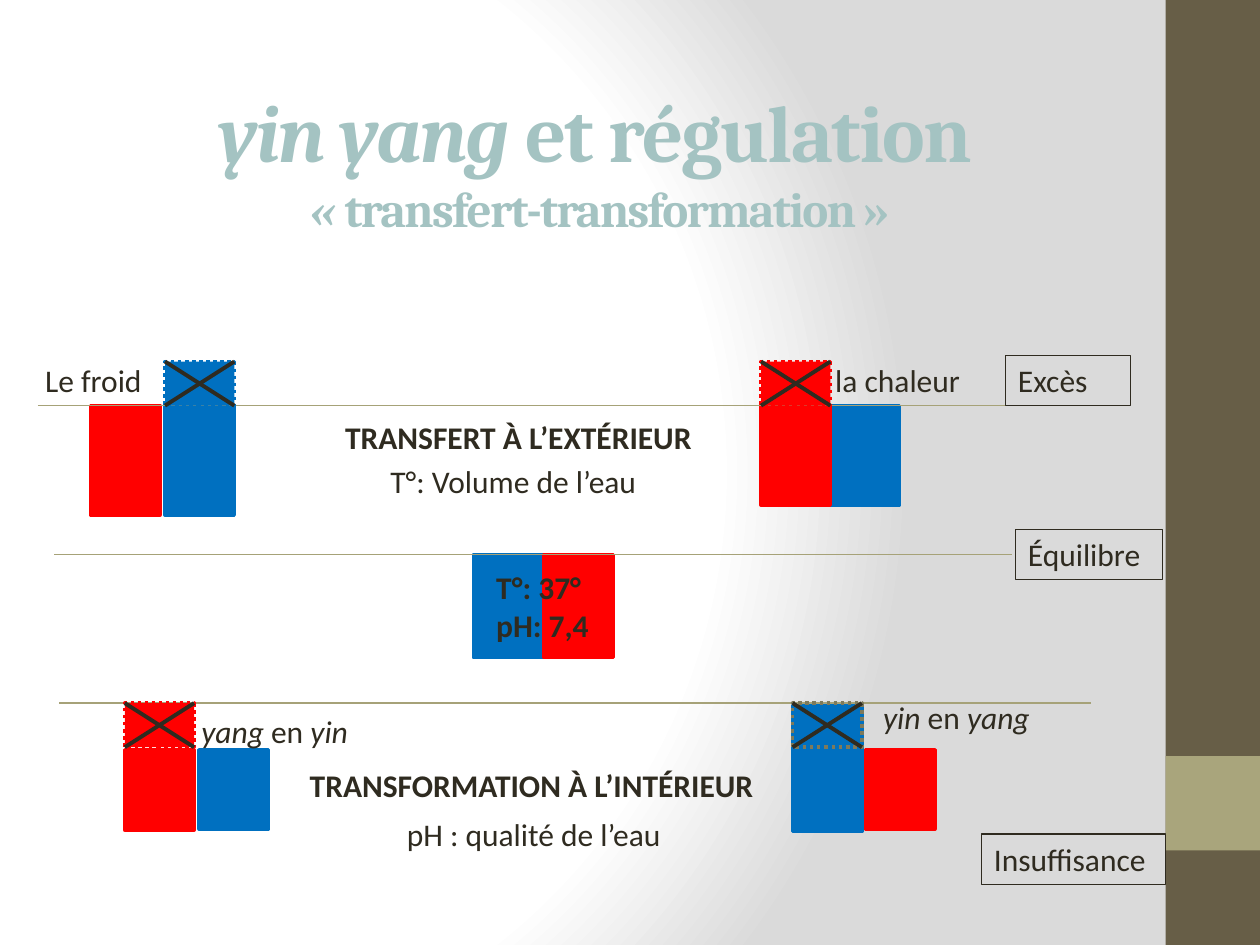
from dataclasses import dataclass
from typing import Optional

from pptx import Presentation, oxml
from pptx import util as u
from pptx.dml.color import RGBColor
from pptx.enum import dml, shapes, text
from pptx.oxml import ns

RED, BLUE, DARK, OLIVE = "FF0000", "0070C0", "2F2B20", "A6A278"
BAR_WIDTH, EXCESS_HEIGHT = 39.6, 25.2
UPPER, MIDDLE, LOWER, FLOOR = 231.8, 316.8, 401.8, 428.4
BODY = {"name": "Calibri", "size": u.Pt(18)}
BOLD = {"bold": True}
ITALIC = {"italic": True}


@dataclass
class Box:
    left: float
    top: float
    width: float
    height: float
    fill: Optional[str] = None
    line: Optional[str] = None
    weight: float = 2
    dash: Optional[dml.MSO_LINE] = None


@dataclass
class Line:
    start: tuple[float, float]
    end: tuple[float, float]
    color: str = OLIVE
    weight: float = 1


@dataclass
class Label:
    left: float
    top: float
    width: float
    paragraphs: list
    wrap: bool = False
    framed: bool = False


def color(value: str) -> RGBColor:
    return RGBColor.from_string(value)


def apply(target, values: dict) -> None:
    for name, value in values.items():
        setattr(target, name, value)


def paint(shape, fill: Optional[str], line: Optional[str], weight: float) -> None:
    if fill:
        shape.fill.solid()
        shape.fill.fore_color.rgb = color(fill)
    else:
        shape.fill.background()
    if line:
        shape.line.color.rgb = color(line)
        shape.line.width = u.Pt(weight)
    else:
        shape.line.fill.background()


def draw_box(slide, box: Box) -> None:
    shape = slide.shapes.add_shape(
        shapes.MSO_SHAPE.RECTANGLE,
        *map(u.Pt, (box.left, box.top, box.width, box.height)))
    shape.shadow.inherit = False
    paint(shape, box.fill, box.line, box.weight)
    if box.dash:
        shape.line.dash_style = box.dash


def draw_line(slide, line: Line) -> None:
    connector = slide.shapes.add_connector(
        shapes.MSO_CONNECTOR.STRAIGHT, *map(u.Pt, line.start + line.end))
    connector.line.color.rgb = color(line.color)
    connector.line.width = u.Pt(line.weight)
    properties = connector.element.spPr
    properties.append(properties.makeelement(ns.qn("a:effectLst"), {}))


def draw_cross(slide, box: Box) -> None:
    right, bottom = box.left + box.width, box.top + box.height
    draw_line(slide, Line((box.left, box.top), (right, bottom), DARK, 2.25))
    draw_line(slide, Line((box.left, bottom), (right, box.top), DARK, 2.25))


def write_run(paragraph, words: str, values: dict, rgb: str):
    run = paragraph.add_run()
    run.text = words
    apply(run.font, values)
    run.font.color.rgb = color(rgb)
    return run


def draw_label(slide, label: Label) -> None:
    height = 28.8 if len(label.paragraphs) == 1 else 51.1
    shape = slide.shapes.add_textbox(
        *map(u.Pt, (label.left, label.top, label.width, height)))
    if label.framed:
        paint(shape, None, DARK, 0.75)
    frame = shape.text_frame
    apply(frame, {"word_wrap": label.wrap,
                  "auto_size": text.MSO_AUTO_SIZE.SHAPE_TO_FIT_TEXT})
    for index, runs in enumerate(label.paragraphs):
        paragraph = frame.add_paragraph() if index else frame.paragraphs[0]
        for words, values in runs:
            write_run(paragraph, words, BODY | values, DARK)


def draw_background(slide) -> None:
    slide.background.fill.solid()
    solid = slide.background.element.find(".//" + ns.qn("a:solidFill")) \
        if hasattr(slide.background, "element") \
        else slide.element.find(".//" + ns.qn("p:bgPr") + "/" + ns.qn("a:solidFill"))
    stops = "".join(
        f'<a:gs pos="{position}"><a:srgbClr val="{value}"/></a:gs>'
        for position, value in ((0, "FFFFFF"), (75000, "FFFFFF"), (100000, "DADADA")))
    gradient = oxml.parse_xml(
        f'<a:gradFill {ns.nsdecls("a")} rotWithShape="1"><a:gsLst>{stops}</a:gsLst>'
        '<a:path path="circle"><a:fillToRect l="20000" t="50000" r="100000" b="50000"/>'
        '</a:path></a:gradFill>')
    solid.getparent().replace(solid, gradient)


def write_title(slide) -> None:
    title = slide.shapes.title
    apply(title, {"left": u.Pt(13.7), "top": u.Pt(20.9),
                  "width": u.Pt(653), "height": u.Pt(140.4)})
    apply(title.text_frame, {"word_wrap": True,
                             "auto_size": text.MSO_AUTO_SIZE.NONE,
                             "vertical_anchor": text.MSO_ANCHOR.MIDDLE})
    paragraph = title.text_frame.paragraphs[0]
    paragraph.alignment = text.PP_ALIGN.CENTER
    lines = [(46, [("yin yang ", True), ("et régulation", False)]),
             (28, [(" « ", True), ("transfert-transformation »", False)])]
    for index, (size, runs) in enumerate(lines):
        if index:
            paragraph.add_line_break()
        for words, italic in runs:
            values = {"name": "Cambria", "size": u.Pt(size),
                      "bold": True, "italic": italic}
            run = write_run(paragraph, words, values, "A4C3C2")
            run.font._element.set("spc", "-100")


def bar(left: float, top: float, height: float, fill: str) -> Box:
    return Box(left, top, BAR_WIDTH, height, fill, fill)


def excess(left: float, top: float, fill: Optional[str], line: str) -> Box:
    return Box(left, top, BAR_WIDTH, EXCESS_HEIGHT, fill, line,
               dash=dml.MSO_LINE.ROUND_DOT)


SIDEBAR = [Box(666, 0, 54, 540, "675E47"), Box(666, 432, 54, 54, "A9A57C")]
BARS = [
    bar(51.8, UPPER, 62.6, RED), bar(94.3, UPPER, 62.6, BLUE),
    bar(474.5, UPPER, 56.9, BLUE), bar(434.9, UPPER, 56.9, RED),
    bar(270.7, MIDDLE, 59, BLUE), bar(311, MIDDLE, 59, RED),
    bar(71.3, FLOOR, 46, RED), bar(113.8, FLOOR, 45.4, BLUE),
    bar(452.9, 403.2, 72, BLUE), bar(494.6, FLOOR, 45.4, RED),
]
LEVELS = [Line((21.6, UPPER), (611.3, UPPER)),
          Line((31, MIDDLE), (578.2, MIDDLE)),
          Line((33.8, LOWER), (623.5, LOWER))]
EXCESSES = [
    excess(94.3, UPPER - EXCESS_HEIGHT, BLUE, BLUE),
    excess(71.3, LOWER, RED, RED),
    excess(434.9, UPPER - EXCESS_HEIGHT, RED, RED),
    excess(452.9, LOWER, None, "7D7A5C"),
]
LABELS = [
    Label(574.6, 203, 71.3, [[("Excès", {})]], True, True),
    Label(560.9, 476.6, 105.1, [[("Insuffisance", {})]], True, True),
    Label(580.3, 302.4, 84.2, [[("Équilibre", {})]], False, True),
    Label(216, 260.6, 168.5, [[("T°: Volume de l’eau", {})]], True),
    Label(225.4, 462.2, 169.9, [[("pH : qualité de l’eau", {})]], True),
    Label(169.9, 434.2, 270, [[("TRANSFORMATION À L’INTÉRIEUR", BOLD)]]),
    Label(190.1, 235.4, 214.6, [[("TRANSFERT À L’EXTÉRIEUR", BOLD)]]),
    Label(108, 403.2, 103.7, [[("yang", ITALIC), (" en ", {}), ("yin", ITALIC)]]),
    Label(497.5, 395.3, 107.3, [[("yin", ITALIC), (" en ", {}), ("yang", ITALIC)]]),
    Label(18.7, 203, 70.6, [[("Le froid", {})]]),
    Label(470.2, 203, 86.4, [[("la chaleur", {})]]),
    Label(276.5, 321.1, 67.7, [[("T°: 37°", BOLD)], [("pH: 7,4", BOLD)]]),
]


def main() -> None:
    presentation = Presentation()
    apply(presentation, {"slide_width": u.Pt(720), "slide_height": u.Pt(540)})
    slide = presentation.slides.add_slide(presentation.slide_layouts[5])
    draw_background(slide)
    write_title(slide)
    for draw, items in ((draw_box, SIDEBAR + BARS), (draw_line, LEVELS),
                        (draw_box, EXCESSES), (draw_cross, EXCESSES),
                        (draw_label, LABELS)):
        for item in items:
            draw(slide, item)
    presentation.save("out.pptx")


if __name__ == "__main__":
    main()
